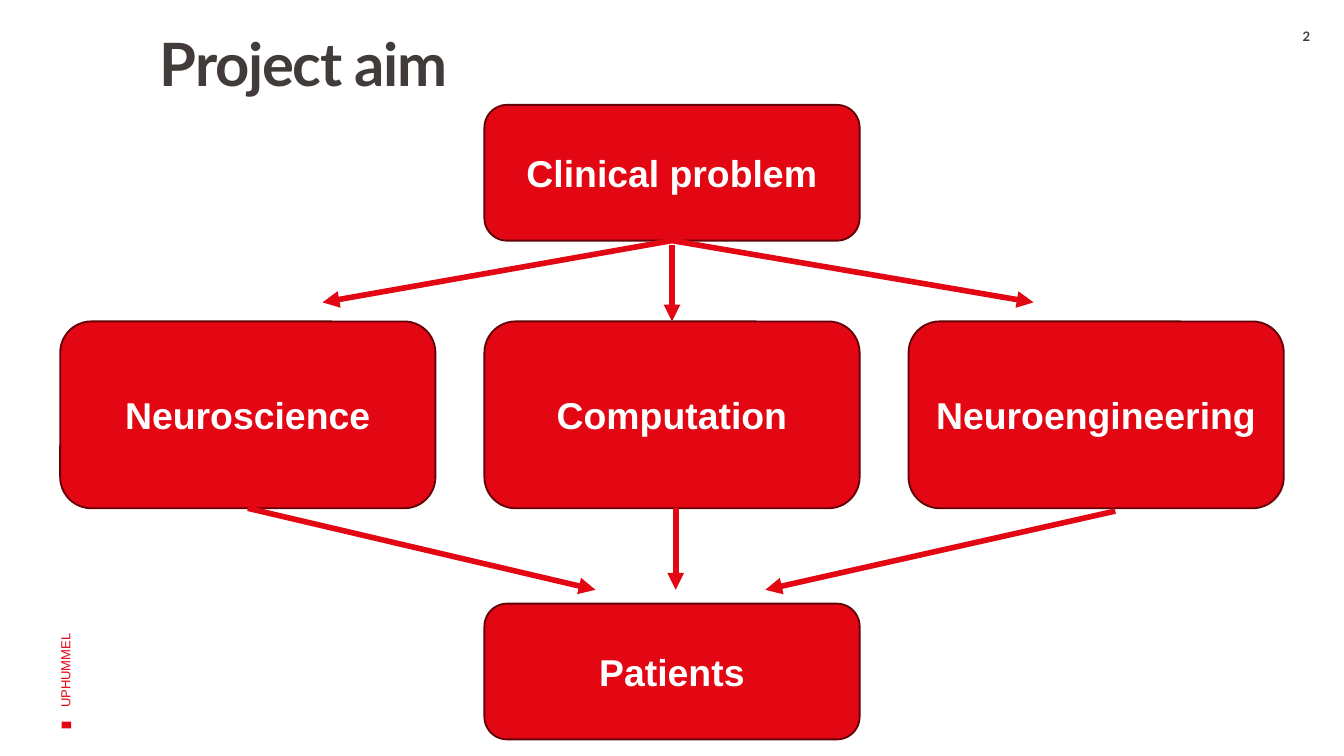
from dataclasses import dataclass

from lxml.etree import SubElement
from pptx import Presentation
from pptx.dml.color import RGBColor
from pptx.enum.shapes import MSO_CONNECTOR as Connector, MSO_SHAPE as Shape
from pptx.enum.text import MSO_ANCHOR as Anchor, PP_ALIGN as Align
from pptx.oxml.ns import qn
from pptx.util import Pt


@dataclass(frozen=True)
class Theme:
    red: RGBColor = RGBColor(0xE3, 0x06, 0x13)
    outline: RGBColor = RGBColor(0x63, 0x03, 0x08)
    dark: RGBColor = RGBColor(0x41, 0x3C, 0x3A)
    white: RGBColor = RGBColor(0xFF, 0xFF, 0xFF)
    heading_font: str = "Lato"
    body_font: str = "Arial"
    title_size: int = 32
    box_size: int = 20
    small_size: int = 7


THEME = Theme()

# Box grid, in points
BOX_WIDTH = 201
FIRST_LEFT = 32.25
COLUMN_STEP = 227.25
LEFTS = [FIRST_LEFT + column * COLUMN_STEP for column in range(3)]
TOP_ROW, MIDDLE_ROW, BOTTOM_ROW = (56.2, 72.7), (172.2, 100.1), (323.4, 72.7)
BOTTOM_SITE, TOP_SITE = 2, 0


def points(*values):
    return [Pt(value) for value in values]


def write(frame, text, font, size, color, bold=False, align=Align.LEFT):
    paragraph = frame.paragraphs[0]
    paragraph.alignment = align
    run = paragraph.add_run()
    run.text = text
    run.font.name = font
    run.font.size = Pt(size)
    run.font.bold = bold
    run.font.color.rgb = color
    return paragraph, run


def add_label(slide, area, margins, anchor=Anchor.TOP):
    label = slide.shapes.add_textbox(*points(*area))
    frame = label.text_frame
    frame.word_wrap = True
    frame.vertical_anchor = anchor
    (frame.margin_left, frame.margin_top,
     frame.margin_right, frame.margin_bottom) = points(*margins)
    return label


def add_box(slide, text, left, row):
    top, height = row
    box = slide.shapes.add_shape(
        Shape.ROUNDED_RECTANGLE, *points(left, top, BOX_WIDTH, height))
    box.shadow.inherit = False
    box.fill.solid()
    box.fill.fore_color.rgb = THEME.red
    box.line.color.rgb = THEME.outline
    box.line.width = Pt(1)
    box.text_frame.word_wrap = True
    box.text_frame.vertical_anchor = Anchor.MIDDLE
    write(box.text_frame, text, THEME.body_font, THEME.box_size,
          THEME.white, bold=True, align=Align.CENTER)
    return box


def add_arrow(slide, start, end, source=None, target=None):
    arrow = slide.shapes.add_connector(
        Connector.STRAIGHT, *points(*start, *end))
    if source is not None:
        arrow.begin_connect(source, BOTTOM_SITE)
    if target is not None:
        arrow.end_connect(target, TOP_SITE)
    arrow.line.color.rgb = THEME.red
    arrow.line.width = Pt(3)
    line = arrow.line._get_or_add_ln()
    SubElement(line, qn("a:tailEnd"), type="triangle")
    SubElement(arrow._element.spPr, qn("a:effectLst"))


def add_frame_text(slide):
    # Footer marker and vertical name
    marker = slide.shapes.add_shape(
        Shape.RECTANGLE, *points(33.8, 385.9, 3.6, 5))
    marker.shadow.inherit = False
    marker.rotation = 270
    marker.fill.solid()
    marker.fill.fore_color.rgb = THEME.red
    marker.line.fill.background()

    name = add_label(slide, (-96.5, 218.9, 262.8, 72),
                     (7.2, 3.6, 7.2, 3.6), Anchor.MIDDLE)
    name.rotation = 270
    write(name.text_frame, "UPHUMMEL", THEME.body_font,
          THEME.small_size, THEME.red)

    # Title
    title = add_label(slide, (71.3, 21.6, 288.7, 84.2), (14.4, 0, 5.8, 3.6))
    paragraph, run = write(title.text_frame, "Project aim",
                           THEME.heading_font, THEME.title_size,
                           THEME.dark, bold=True)
    paragraph.line_spacing = 0.8
    run.font._element.set("spc", "-70")

    # Page number
    number = add_label(slide, (679.7, 15.1, 40.3, 13), (7.2, 0, 7.2, 0))
    write(number.text_frame, "2", THEME.heading_font, THEME.small_size,
          THEME.dark, bold=True, align=Align.CENTER)


def add_diagram(slide):
    # Boxes
    fields = ["Neuroscience", "Computation", "Neuroengineering"]
    neuroscience, computation, _ = [
        add_box(slide, text, left, MIDDLE_ROW)
        for text, left in zip(fields, LEFTS)]
    problem = add_box(slide, "Clinical problem", LEFTS[1], TOP_ROW)
    add_box(slide, "Patients", LEFTS[1], BOTTOM_ROW)

    # Arrows from the problem to the fields
    add_arrow(slide, (360, 128.9), (172.8, 162), source=problem)
    add_arrow(slide, (360, 131), (360, 172.2), target=computation)
    add_arrow(slide, (360, 128.9), (553.7, 162), source=problem)

    # Arrows from the fields to the patients
    add_arrow(slide, (132.75, 272.3), (319, 316), source=neuroscience)
    add_arrow(slide, (362, 272.3), (362, 316))
    add_arrow(slide, (597.5, 273.8), (410, 316))


def main():
    presentation = Presentation()
    presentation.slide_width, presentation.slide_height = points(720, 405)
    slide = presentation.slides.add_slide(presentation.slide_layouts[6])
    add_frame_text(slide)
    add_diagram(slide)
    presentation.save("out.pptx")


if __name__ == "__main__":
    main()
